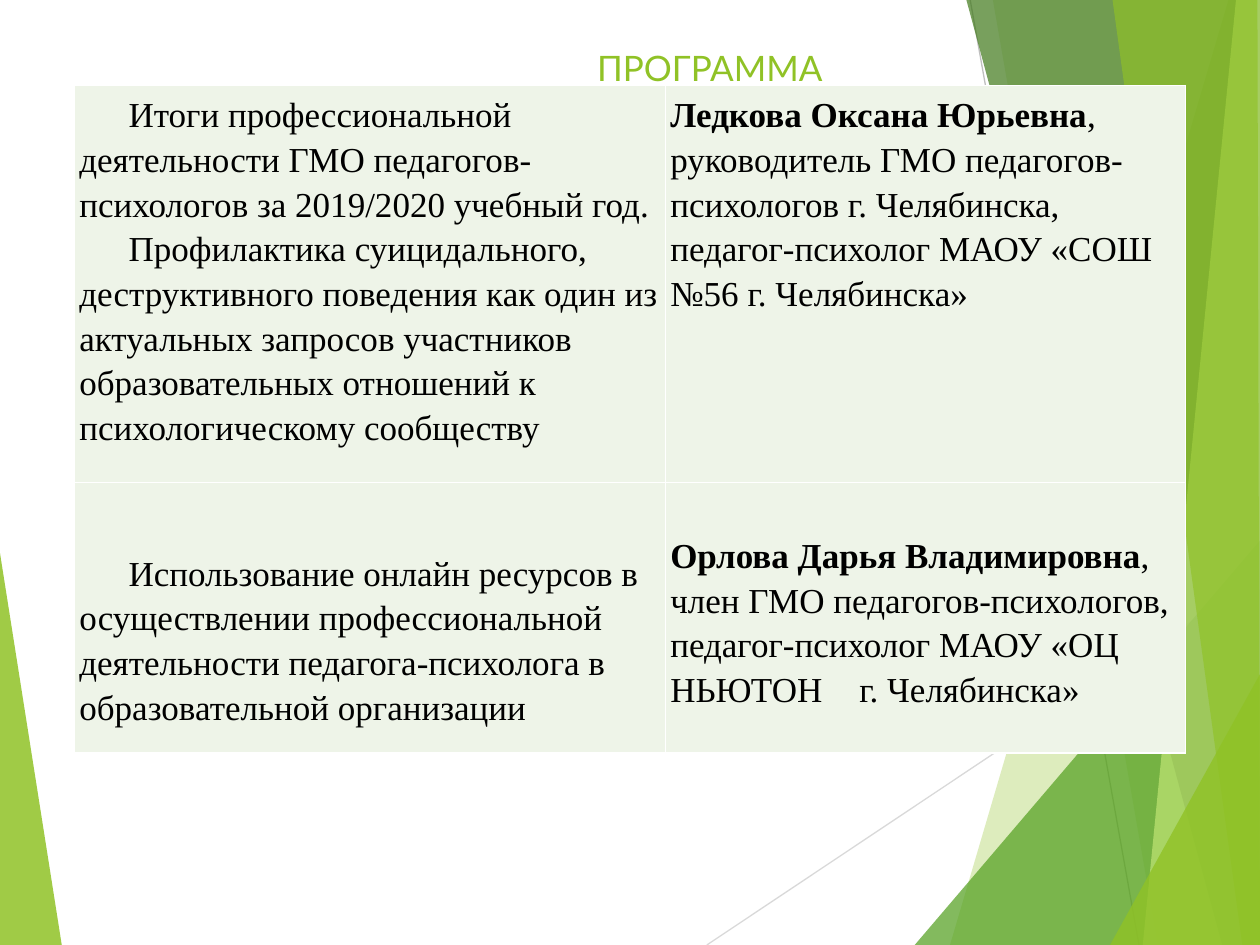
import pptx
import pptx.util
import pptx.dml.color
import pptx.enum.shapes
import pptx.enum.text
import pptx.oxml
import pptx.oxml.ns
from pptx.util import Inches

WIDTH, HEIGHT = 10, 7.5
GREEN = "90C226"

# Facets from back to front: colour, opacity in percent, corners in inches
LEFT_FACET = (GREEN, 85, [(0, 4.39), (0.49, 7.5), (0, 7.5)])
RIGHT_FACETS = [
    (GREEN, 30, [(9.75, 0), (7.54, 7.5), (10, 7.5), (10, 0)]),
    (GREEN, 20, [(7.88, 0), (9.19, 7.5), (10, 7.5), (10, 0)]),
    ("54A021", 72, [(7.26, 7.5), (10, 4.29), (10, 7.5)]),
    ("3F7819", 70, [(7.67, 0), (9.7, 7.5), (10, 7.5), (10, 0)]),
    ("C0E474", 70, [(9.81, 0), (9.07, 7.5), (10, 7.5), (10, 0)]),
    (GREEN, 65, [(8.83, 0), (9.86, 7.5), (10, 7.5), (9.98, 0)]),
    (GREEN, 80, [(8.81, 7.5), (10, 5.35), (10, 7.5)]),
]
RAYS = [("D9D9D9", (5.61, 7.5), (10, 4.57)), ("BFBFBF", (7.7, 0), (9.04, 7.5))]

# Each cell: top margin, first-line indent, paragraphs of (text, bold) runs
PROGRAMME = [
    [
        (0.04, 0.39, [
            [("Итоги профессиональной деятельности ГМО педагогов-психологов "
              "за 2019/2020 учебный год.", False)],
            [("Профилактика суицидального, деструктивного поведения как один из "
              "актуальных запросов участников образовательных отношений к "
              "психологическому сообществу", False)],
        ]),
        (0.04, 0, [[
            ("Ледкова Оксана Юрьевна", True),
            (", руководитель ГМО педагогов-психологов г. Челябинска, "
             "педагог-психолог МАОУ «СОШ №56 г. Челябинска»", False),
        ]]),
    ],
    [
        (0.53, 0.39, [
            [("Использование онлайн ресурсов в осуществлении профессиональной "
              "деятельности педагога-психолога в образовательной организации", False)],
        ]),
        (0.39, 0, [[
            ("Орлова Дарья Владимировна", True),
            (", член ГМО педагогов-психологов, педагог-психолог "
             "МАОУ «ОЦ НЬЮТОН\tг. Челябинска»", False),
        ]]),
    ],
]
COLUMN_SHARES = (4.69, 4.13)
ROW_SHARES = (2.9, 2.15)
TAB_STOP = 2.8


def colour(hex_string):
    return pptx.dml.color.RGBColor.from_string(hex_string)


def apply(target, **values):
    for name, value in values.items():
        setattr(target, name, value)


def xml(markup):
    return pptx.oxml.parse_xml(markup.replace(">", f" {pptx.oxml.ns.nsdecls('a')}>", 1))


def add_facet(slide, hex_string, opacity, corners):
    points = [(Inches(x), Inches(y)) for x, y in corners]
    outline = slide.shapes.build_freeform(*points[0])
    outline.add_line_segments(points[1:], close=True)
    facet = outline.convert_to_shape()
    facet.shadow.inherit = False
    facet.line.fill.background()
    facet.fill.solid()
    facet.fill.fore_color.rgb = colour(hex_string)
    tint = facet.fill._xPr.find(".//" + pptx.oxml.ns.qn("a:srgbClr"))
    tint.append(xml(f'<a:alpha val="{opacity * 1000}"></a:alpha>'))


def add_ray(slide, hex_string, start, end):
    ray = slide.shapes.add_connector(
        pptx.enum.shapes.MSO_CONNECTOR.STRAIGHT, *map(Inches, start + end))
    ray.line.color.rgb = colour(hex_string)
    ray.line.width = pptx.util.Pt(0.75)
    ray._element.spPr.append(xml("<a:effectLst></a:effectLst>"))


def add_backdrop(slide):
    add_facet(slide, *LEFT_FACET)
    for ray in RAYS:
        add_ray(slide, *ray)
    for facet in RIGHT_FACETS:
        add_facet(slide, *facet)


def add_heading(slide, left, top, width, height):
    frame = slide.shapes.add_textbox(*map(Inches, (left, top, width, height))).text_frame
    apply(frame, word_wrap=True, margin_top=Inches(0.07), margin_bottom=0,
          vertical_anchor=pptx.enum.text.MSO_ANCHOR.TOP)
    heading = frame.paragraphs[0]
    heading.alignment = pptx.enum.text.PP_ALIGN.CENTER
    run = heading.add_run()
    run.text = "ПРОГРАММА "
    apply(run.font, name="Lato", size=pptx.util.Pt(20))
    run.font.color.rgb = colour(GREEN)


def add_borders(cell):
    properties = cell._tc.get_or_add_tcPr()
    for position, side in enumerate(("lnL", "lnR", "lnT", "lnB")):
        properties.insert(position, xml(
            f'<a:{side} w="12700"><a:solidFill><a:srgbClr val="FFFFFF"/>'
            f"</a:solidFill></a:{side}>"))


def fill_cell(cell, top_margin, indent, paragraphs):
    side = Inches(0.04)
    apply(cell, margin_left=side, margin_right=side, margin_bottom=side,
          margin_top=Inches(top_margin))
    cell.fill.solid()
    cell.fill.fore_color.rgb = colour("EEF4E8")
    add_borders(cell)
    for number, runs in enumerate(paragraphs):
        frame = cell.text_frame
        paragraph = frame.add_paragraph() if number else frame.paragraphs[0]
        paragraph.line_spacing = 1.15
        layout = paragraph._p.get_or_add_pPr()
        layout.set("marL", "0")
        layout.set("indent", str(Inches(indent)))
        if any("\t" in text for text, _ in runs):
            layout.append(xml(f'<a:tabLst><a:tab pos="{Inches(TAB_STOP)}" algn="l"/></a:tabLst>'))
        for text, bold in runs:
            run = paragraph.add_run()
            run.text = text
            apply(run.font, name="Times New Roman", size=pptx.util.Pt(20), bold=bold)
            run.font.color.rgb = colour("000000")


def add_programme(slide, left, top, width, height):
    table = slide.shapes.add_table(
        len(PROGRAMME), len(PROGRAMME[0]), *map(Inches, (left, top, width, height))).table
    apply(table, first_row=False, horz_banding=False)
    for column, share in zip(table.columns, COLUMN_SHARES):
        column.width = Inches(width * share / sum(COLUMN_SHARES))
    for row, share, contents in zip(table.rows, ROW_SHARES, PROGRAMME):
        row.height = Inches(height * share / sum(ROW_SHARES))
        for cell, content in zip(row.cells, contents):
            fill_cell(cell, *content)


def main():
    deck = pptx.Presentation()
    apply(deck, slide_width=Inches(WIDTH), slide_height=Inches(HEIGHT))
    slide = deck.slides.add_slide(deck.slide_layouts[6])
    add_backdrop(slide)
    add_heading(slide, 1.57, 0.3, 8.2, 0.38)
    add_programme(slide, 0.59, 0.68, 8.82, 5.05)
    deck.save("out.pptx")


if __name__ == "__main__":
    main()
